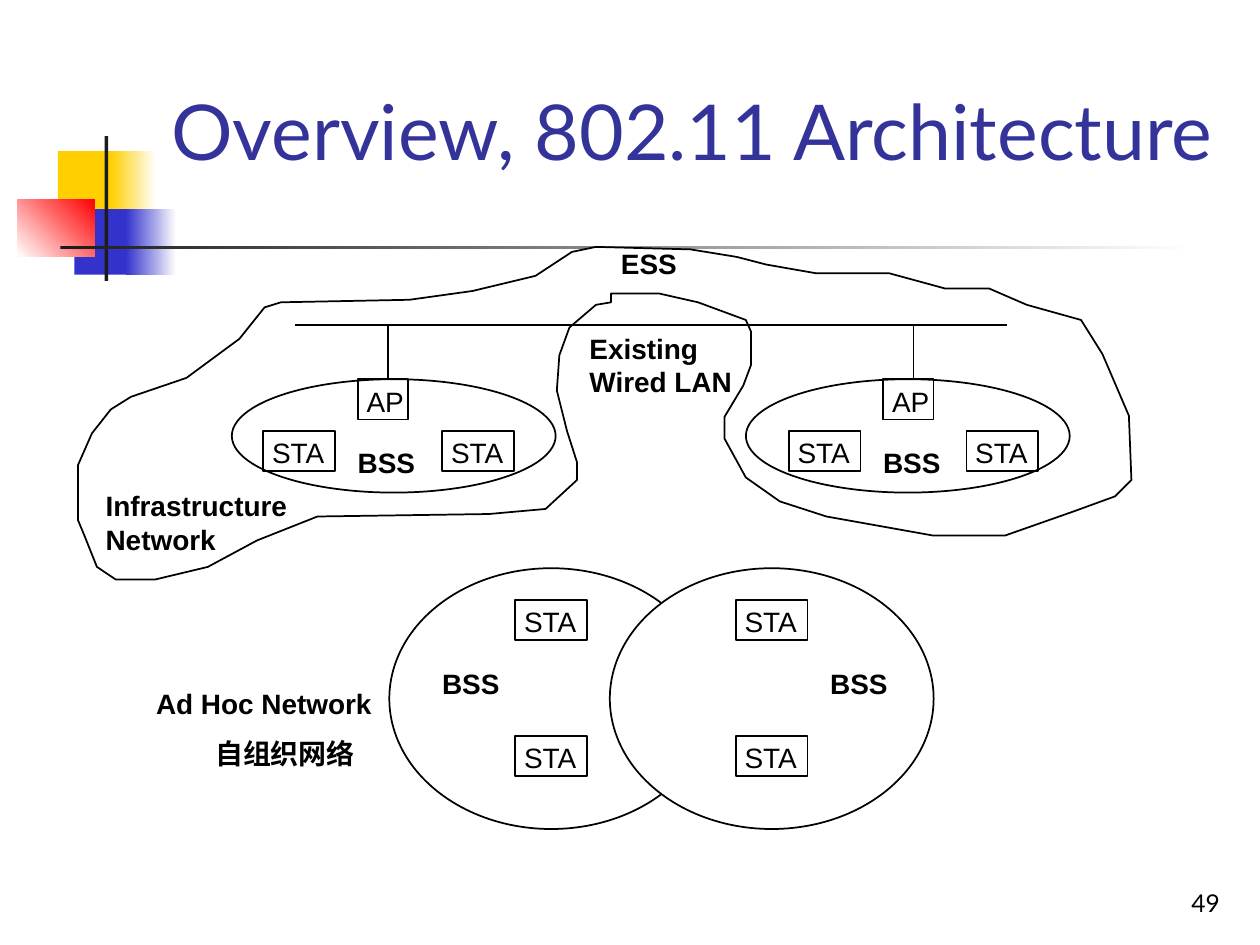
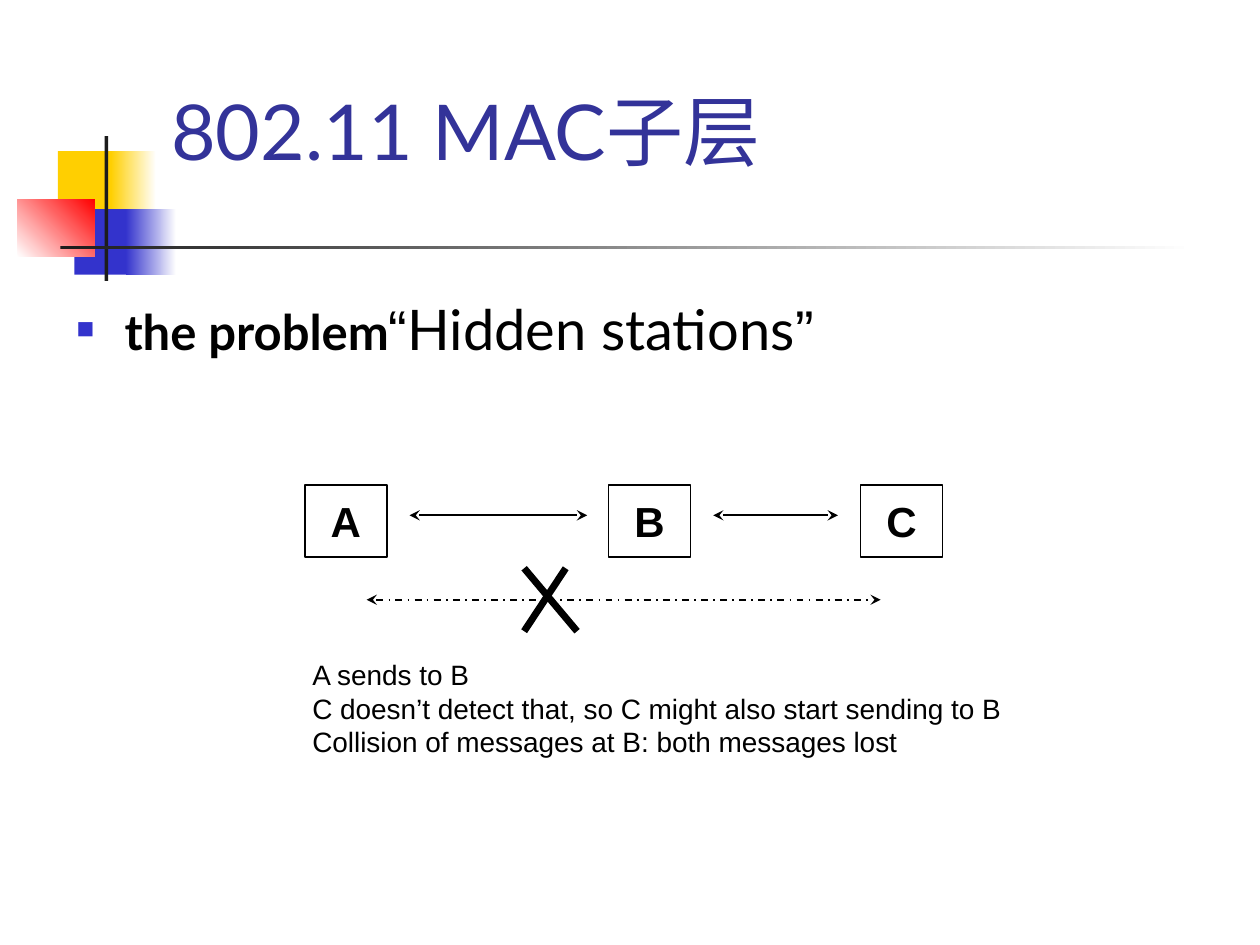
from lxml import etree
from pptx import Presentation
from pptx.dml.color import RGBColor
from pptx.enum.dml import MSO_LINE
from pptx.enum.shapes import MSO_CONNECTOR, MSO_SHAPE
from pptx.enum.text import MSO_ANCHOR, MSO_AUTO_SIZE, PP_ALIGN
from pptx.oxml.ns import qn
from pptx.util import Pt

PX = 9144
RECT, OVAL = MSO_SHAPE.RECTANGLE, MSO_SHAPE.OVAL
STRAIGHT = MSO_CONNECTOR.STRAIGHT
DASHDOT = MSO_LINE.DASH_DOT
TOP, MID, LOW = MSO_ANCHOR.TOP, MSO_ANCHOR.MIDDLE, MSO_ANCHOR.BOTTOM
LEFT, CENTER, RIGHT = PP_ALIGN.LEFT, PP_ALIGN.CENTER, PP_ALIGN.RIGHT
NO_FIT = MSO_AUTO_SIZE.NONE

BLACK = RGBColor.from_string("000000")
WHITE = RGBColor.from_string("FFFFFF")
GOLD = RGBColor.from_string("FFCF01")
BLUE = RGBColor.from_string("3333CC")
NAVY = RGBColor.from_string("333399")
RED = RGBColor.from_string("FF0000")
INK = RGBColor.from_string("1C1C1C")
SANS, HEAD = "Arial", "Lato"

TITLE_BOX = (126, 23, 852, 160)
BAND = [
    ((46, 120, 48, 52), GOLD, None, 0),
    ((88, 120, 36, 52), GOLD, WHITE, 0),
    ((59, 166, 46, 52), BLUE, None, 0),
    ((100, 166, 40, 52), BLUE, WHITE, 0),
    ((14, 158, 61, 46), WHITE, RED, 45),
    ((83, 108, 3, 115), INK, None, 0),
    ((48, 195, 900, 3), INK, WHITE, 0),
]

ESS_EDGE = [
    (485, 240), (473, 242), (452, 260), (444, 282), (442, 310), (450, 342),
    (458, 367), (458, 381), (433, 404), (388, 408), (252, 410), (204, 429),
    (165, 450), (123, 460), (92, 460), (77, 450), (67, 425), (62, 413),
    (62, 369), (73, 344), (88, 325), (104, 315), (148, 300), (190, 269),
    (210, 244), (223, 240), (325, 238), (375, 231), (425, 219), (454, 200),
    (473, 196), (548, 198), (585, 204), (608, 210), (648, 217), (706, 217),
    (750, 229), (785, 229), (815, 242), (858, 254), (875, 281), (896, 330),
    (898, 381), (885, 394), (852, 406), (798, 425), (740, 425), (656, 410),
    (619, 398), (592, 379), (575, 348), (575, 331), (590, 306), (596, 290),
    (596, 263), (592, 254), (554, 240), (523, 233), (485, 233),
]
CELL_TOPS = [((309, 484), 451, 207), ((184, 592), 301, 90)]
NODES = [
    ((284, 701), (301,), 40, "AP"),
    ((209, 351, 626, 767), (342,), 57, "STA"),
    ((409, 584), (476, 584), 57, "STA"),
]
BUS = (234, 258, 799, 258)
DROPS = (308, 725)
LABELS = [
    ("ESS", 483, 191, 68),
    ("BSS", 274, 349, 68),
    ("BSS", 691, 349, 68),
    ("BSS", 341, 524, 68),
    ("BSS", 649, 524, 68),
    ("Existing Wired LAN", 458, 258, 151),
    ("Infrastructure Network", 74, 383, 176),
    ("Ad Hoc Network", 114, 540, 205),
    ("自组织网络", 161, 580, 144),
]

POINT = [("the problem", 28, HEAD, True), ("“", 32, SANS, False),
         ("Hidden stations", 32, HEAD, False), ("”", 32, SANS, False)]
STATIONS = [("A", 242), ("B", 483), ("C", 683)]
LINKS = [(325, 466, 409, None), (566, 665, 409, None),
         (291, 699, 476, DASHDOT)]
CROSS = [(416, 458), (449, 416)]
NOTES = ["A sends to B",
         "C doesn’t detect that, so C might also start sending to B",
         "Collision of messages at B: both messages lost"]


def emu(box):
    return [n * PX for n in box]


def style(font, size, face=SANS, color=BLACK, bold=False):
    font.size, font.name, font.bold = Pt(size), face, bold
    font.color.rgb = color


def write(shape, lines, size, face=SANS, color=BLACK, bold=False,
          align=LEFT, anchor=TOP, wrap=True, pad=(10, 5)):
    frame = shape.text_frame
    frame.auto_size, frame.word_wrap = NO_FIT, wrap
    frame.vertical_anchor = anchor
    frame.margin_left = frame.margin_right = pad[0] * PX
    frame.margin_top = frame.margin_bottom = pad[1] * PX
    frame.text = "\n".join(lines)
    for para in frame.paragraphs:
        para.alignment = align
        style(para.font, size, face, color, bold)


def label(slide, box, lines, size, **look):
    write(slide.shapes.add_textbox(*emu(box)), lines, size, **look)


def paint(shape, fill=None, edge=BLACK):
    shape.shadow.inherit = False
    if fill is None:
        shape.fill.background()
    else:
        shape.fill.solid()
        shape.fill.fore_color.rgb = fill
    if edge is None:
        shape.line.fill.background()
    else:
        shape.line.color.rgb = edge
        shape.line.width = Pt(1)


def add(slide, kind, box, fill=None, edge=BLACK):
    shape = slide.shapes.add_shape(kind, *emu(box))
    paint(shape, fill, edge)
    return shape


def wire(slide, ends, width=1, dash=None, arrows=False):
    line = slide.shapes.add_connector(STRAIGHT, *emu(ends))
    line.line.color.rgb = BLACK
    line.line.width = Pt(width)
    if dash:
        line.line.dash_style = dash
    props = line._element.spPr
    if arrows:
        for end in ("a:headEnd", "a:tailEnd"):
            etree.SubElement(props.find(qn("a:ln")), qn(end), type="stealth")
    etree.SubElement(props, qn("a:effectLst"))


def start(deck, title):
    slide = deck.slides.add_slide(deck.slide_layouts[5])
    head = slide.shapes.title
    head.left, head.top, head.width, head.height = emu(TITLE_BOX)
    write(head, [title], 44, HEAD, NAVY, anchor=MID)
    for box, tint, fade, angle in BAND:
        part = add(slide, RECT, box, tint, None)
        if fade is not None:
            part.fill.gradient()
            part.fill.gradient_angle = angle
            for stop, color in zip(part.fill.gradient_stops, (tint, fade)):
                stop.color.rgb = color
    return slide


def bullet(para):
    props = para._p.get_or_add_pPr()
    props.set("marL", str(38 * PX))
    props.set("indent", str(-38 * PX))
    color = etree.SubElement(props, qn("a:buClr"))
    etree.SubElement(color, qn("a:srgbClr"), val=str(BLUE))
    etree.SubElement(props, qn("a:buSzPct"), val="60000")
    etree.SubElement(props, qn("a:buFont"), typeface=SANS)
    etree.SubElement(props, qn("a:buChar"), char="■")


def draw_network(deck):
    slide = start(deck, "Overview, 802.11 Architecture")
    label(slide, (770, 683, 208, 50), ["49"], 14, face=HEAD,
          align=RIGHT, anchor=LOW)
    pen = slide.shapes.build_freeform(*ESS_EDGE[0], scale=PX)
    pen.add_line_segments(ESS_EDGE[1:], close=True)
    paint(pen.convert_to_shape(), WHITE)
    for lefts, y, height in CELL_TOPS:
        for x in lefts:
            add(slide, OVAL, (x, y, 257, height), WHITE)
    for lefts, tops, width, name in NODES:
        for x in lefts:
            for y in tops:
                node = add(slide, RECT, (x, y, width, 32))
                write(node, [name], 16, wrap=False, pad=(7, 4))
    wire(slide, BUS)
    for x in DROPS:
        wire(slide, (x, 301, x, BUS[1]))
    for text, x, y, width in LABELS:
        label(slide, (x, y, width, 38), [text], 16, bold=True)


def draw_hidden(deck):
    slide = start(deck, "802.11 MAC子层")
    body = slide.shapes.add_textbox(*emu((51, 218, 892, 95)))
    write(body, [""], 28)
    para = body.text_frame.paragraphs[0]
    para.line_spacing = 1.2
    bullet(para)
    for text, size, face, bold in POINT:
        run = para.add_run()
        run.text = text
        style(run.font, size, face, bold=bold)
    for name, x in STATIONS:
        write(add(slide, RECT, (x, 385, 65, 57)), [name], 24, bold=True,
              align=CENTER, anchor=MID, wrap=False)
    for left, right, y, dash in LINKS:
        wire(slide, (left, y, right, y), dash=dash, arrows=True)
    for head, foot in CROSS:
        wire(slide, (head, 451, foot, 501), width=4)
    label(slide, (238, 517, 569, 90), NOTES, 16, wrap=False)


def main():
    deck = Presentation()
    deck.slide_width, deck.slide_height = emu((1000, 750))
    draw_network(deck)
    draw_hidden(deck)
    deck.save("out.pptx")


if __name__ == "__main__":
    main()
